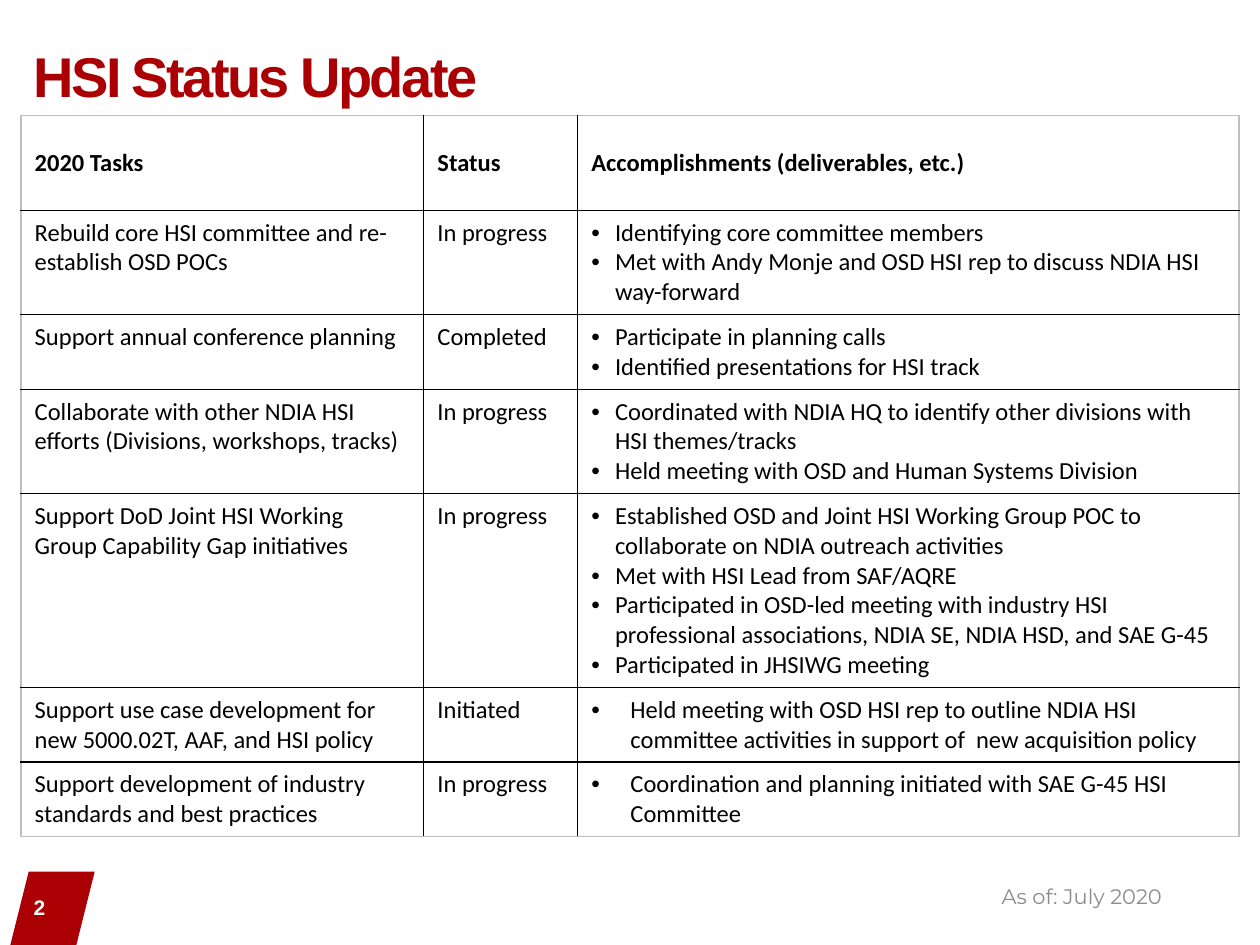
from dataclasses import dataclass

from lxml.etree import SubElement
from pptx import Presentation
from pptx.dml.color import RGBColor
from pptx.enum.shapes import MSO_SHAPE
from pptx.enum.text import MSO_ANCHOR, MSO_AUTO_SIZE, PP_ALIGN
from pptx.oxml.ns import qn
from pptx.util import Cm, Pt


@dataclass(frozen=True)
class Theme:
    """Colours, fonts and type sizes of the deck."""

    red: str = "AB0003"
    ink: str = "000000"
    edge: str = "BFBFBF"
    grey: str = "8C8C8C"
    white: str = "FFFFFF"
    heading_font: str = "Arial"
    table_font: str = "Calibri"
    date_font: str = "Montserrat"
    title_size: int = 32
    table_size: int = 14
    footer_size: int = 12


@dataclass(frozen=True)
class Box:
    """A region of the page in centimetres."""

    left: float
    top: float
    width: float
    height: float

    def lengths(self):
        """Return left, top, width and height as lengths."""
        return Cm(self.left), Cm(self.top), Cm(self.width), Cm(self.height)


THEME = Theme()
HEADINGS = ("2020 Tasks", "Status", "Accomplishments (deliverables, etc.)")
NARROW_INDENT, WIDE_INDENT = 0.48, 0.79
TASKS = (
    ("Rebuild core HSI committee and re-establish OSD POCs", "In progress", NARROW_INDENT,
     ("Identifying core committee members",
      "Met with Andy Monje and OSD HSI rep to discuss NDIA HSI way-forward")),
    ("Support annual conference planning", "Completed", NARROW_INDENT,
     ("Participate in planning calls",
      "Identified presentations for HSI track")),
    ("Collaborate with other NDIA HSI efforts (Divisions, workshops, tracks)",
     "In progress", NARROW_INDENT,
     ("Coordinated with NDIA HQ to identify other divisions with HSI themes/tracks",
      "Held meeting with OSD and Human Systems Division")),
    ("Support DoD Joint HSI Working Group Capability Gap initiatives",
     "In progress", NARROW_INDENT,
     ("Established OSD and Joint HSI Working Group POC to collaborate on NDIA outreach activities",
      "Met with HSI Lead from SAF/AQRE",
      "Participated in OSD-led meeting with industry HSI professional associations, "
      "NDIA SE, NDIA HSD, and SAE G-45",
      "Participated in JHSIWG meeting")),
    ("Support use case development for new 5000.02T, AAF, and HSI policy",
     "Initiated", WIDE_INDENT,
     ("Held meeting with OSD HSI rep to outline NDIA HSI committee activities "
      "in support of  new acquisition policy",)),
    ("Support development of industry standards and best practices",
     "In progress", WIDE_INDENT,
     ("Coordination and planning initiated with SAE G-45 HSI Committee",)),
)
COLUMN_WIDTHS = (8.12, 3.1, 13.34)
ROW_HEIGHTS = (1.91, 1.7, 1.35, 1.35, 1.27, 1.27, 1.27)


def style_text(para, font_name, size, colour, bold=False):
    """Format every run of a paragraph."""
    for span in para.runs:
        span.font.name = font_name
        span.font.size = Pt(size)
        span.font.bold = bold
        span.font.color.rgb = RGBColor.from_string(colour)


def add_bullet(para, indent):
    """Give a paragraph a round bullet with a hanging indent."""
    properties = para._p.get_or_add_pPr()
    properties.set("marL", str(Cm(indent)))
    properties.set("indent", str(-Cm(indent)))
    SubElement(properties, qn("a:buFont"), typeface="Arial")
    SubElement(properties, qn("a:buChar"), char="•")


def add_borders(cell, colours):
    """Draw the left, right, top and bottom borders of a cell."""
    properties = cell._tc.get_or_add_tcPr()
    for side, colour in zip("LRTB", colours):
        line = SubElement(properties, qn(f"a:ln{side}"), w=str(Pt(1)))
        fill = SubElement(line, qn("a:solidFill"))
        SubElement(fill, qn("a:srgbClr"), val=colour)


def fill_cell(cell, lines, indent=0, bold=False):
    """Write lines into a cell, bulleted when an indent is given."""
    cell.margin_left = cell.margin_right = Cm(0.28)
    cell.margin_top = cell.margin_bottom = Cm(0.15)
    cell.vertical_anchor = MSO_ANCHOR.MIDDLE if bold else MSO_ANCHOR.TOP
    cell.text_frame.text = "\n".join(lines)
    for para in cell.text_frame.paragraphs:
        if indent:
            add_bullet(para, indent)
        style_text(para, THEME.table_font, THEME.table_size, THEME.ink, bold)


def place_title(page, box):
    """Move and format the title placeholder."""
    title = page.shapes.title
    title.left, title.top, title.width, title.height = box.lengths()
    frame = title.text_frame
    frame.text = "HSI Status Update"
    frame.auto_size = MSO_AUTO_SIZE.NONE
    frame.vertical_anchor = MSO_ANCHOR.MIDDLE
    para = frame.paragraphs[0]
    para.alignment = PP_ALIGN.LEFT
    style_text(para, THEME.heading_font, THEME.title_size, THEME.red, True)
    para.runs[0]._r.get_or_add_rPr().set("spc", "-150")


def place_task_table(page, box):
    """Build the table of tasks, states and accomplishments."""
    row_count, column_count = len(ROW_HEIGHTS), len(COLUMN_WIDTHS)
    table = page.shapes.add_table(row_count, column_count, *box.lengths()).table
    table.first_row = table.horz_banding = False
    for column, width in zip(table.columns, COLUMN_WIDTHS):
        column.width = Cm(width)
    for row, height in zip(table.rows, ROW_HEIGHTS):
        row.height = Cm(height)

    for column, heading in enumerate(HEADINGS):
        fill_cell(table.cell(0, column), (heading,), bold=True)
    for row, (task, status, indent, accomplishments) in enumerate(TASKS, 1):
        fill_cell(table.cell(row, 0), (task,))
        fill_cell(table.cell(row, 1), (status,))
        fill_cell(table.cell(row, 2), accomplishments, indent)

    for row in range(row_count):
        for column in range(column_count):
            outer_sides = (column == 0, column == column_count - 1,
                           row == 0, row == row_count - 1)
            cell = table.cell(row, column)
            add_borders(cell, [THEME.edge if outer else THEME.ink for outer in outer_sides])
            cell.fill.background()


def add_label(page, box, text, font_name, colour, bold=False, alignment=PP_ALIGN.LEFT):
    """Add a one-line footer label."""
    frame = page.shapes.add_textbox(*box.lengths()).text_frame
    frame.word_wrap = True
    frame.vertical_anchor = MSO_ANCHOR.MIDDLE
    frame.text = text
    frame.paragraphs[0].alignment = alignment
    style_text(frame.paragraphs[0], font_name, THEME.footer_size, colour, bold)


def place_footer(page, box):
    """Place the page number on its badge and the date at the right."""
    badge_box = Box(box.left, box.top, 1.7, box.height)
    badge = page.shapes.add_shape(MSO_SHAPE.PARALLELOGRAM, *badge_box.lengths())
    badge.shadow.inherit = False
    badge.fill.solid()
    badge.fill.fore_color.rgb = RGBColor.from_string(THEME.red)
    badge.line.fill.background()
    add_label(page, Box(box.left + 0.22, box.top + 0.21, 5.92, 1.02), "2",
              THEME.heading_font, THEME.white, bold=True)
    add_label(page, Box(box.left + box.width - 5.92, box.top - 0.02, 5.92, 1.02),
              "As of: July 2020", THEME.date_font, THEME.grey, alignment=PP_ALIGN.CENTER)


def main():
    """Build and save the deck."""
    deck = Presentation()
    deck.slide_width, deck.slide_height = Cm(25.4), Cm(19.05)
    page = deck.slides.add_slide(deck.slide_layouts[5])
    place_title(page, Box(0.42, 0.48, 20.96, 2.06))
    place_task_table(page, Box(0.42, 2.33, sum(COLUMN_WIDTHS), sum(ROW_HEIGHTS)))
    place_footer(page, Box(0.21, 17.57, 24.56, 1.48))
    deck.save("out.pptx")


if __name__ == "__main__":
    main()
